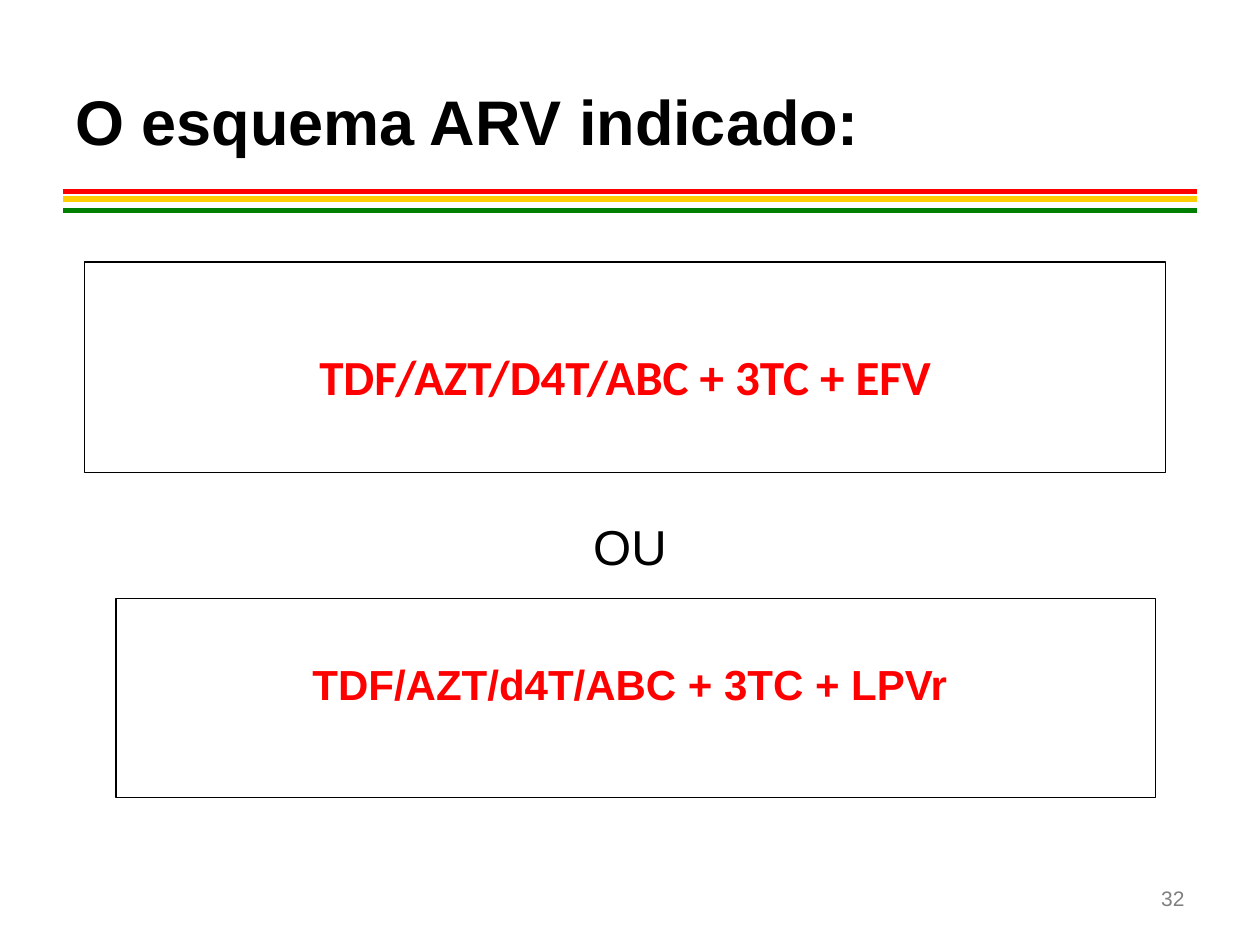
from pptx import Presentation
from pptx import util as u
from pptx.dml.color import RGBColor
from pptx.enum import shapes, text
from pptx.oxml.ns import qn
from lxml import etree

BLACK = RGBColor(0x00, 0x00, 0x00)
WHITE = RGBColor(0xFF, 0xFF, 0xFF)
RED = RGBColor(0xFF, 0x00, 0x00)
YELLOW = RGBColor(0xFF, 0xCC, 0x00)
GREEN = RGBColor(0x00, 0x80, 0x00)
GRAY = RGBColor(0x80, 0x80, 0x80)


class SlideBuilder:
    font_name = "Arial"
    stripe_width = u.Pt(3)
    border_width = u.Pt(0.75)

    def __init__(self, slide):
        self.slide = slide

    def stripe(self, top, color):
        connector = self.slide.shapes.add_connector(
            shapes.MSO_CONNECTOR.STRAIGHT,
            u.Inches(0.5), u.Inches(top), u.Inches(9.5), u.Inches(top))
        connector.line.color.rgb = color
        connector.line.width = self.stripe_width
        properties = connector._element.find(qn("p:spPr"))
        etree.SubElement(properties, qn("a:effectLst"))

    def set_text(self, shape, content, size, color, bold=False, font_name=None,
                 alignment=text.PP_ALIGN.CENTER, anchor=text.MSO_ANCHOR.TOP,
                 top_inset=0.05):
        frame = shape.text_frame
        frame.word_wrap = True
        frame.vertical_anchor = anchor
        frame.margin_top = u.Inches(top_inset)
        frame.text = content
        paragraph = frame.paragraphs[0]
        paragraph.alignment = alignment
        font = paragraph.runs[0].font
        font.name = font_name or self.font_name
        font.size = u.Pt(size)
        font.bold = bold
        font.color.rgb = color

    def label(self, bounds, content, size, color, **style):
        shape = self.slide.shapes.add_textbox(*map(u.Inches, bounds))
        self.set_text(shape, content, size, color, **style)

    def regimen_box(self, bounds, content, size, **style):
        shape = self.slide.shapes.add_shape(
            shapes.MSO_SHAPE.RECTANGLE, *map(u.Inches, bounds))
        shape.shadow.inherit = False
        shape.fill.solid()
        shape.fill.fore_color.rgb = WHITE
        shape.line.color.rgb = BLACK
        shape.line.width = self.border_width
        self.set_text(shape, content, size, RED, bold=True, **style)


def main():
    presentation = Presentation()
    presentation.slide_width = u.Inches(10)
    presentation.slide_height = u.Inches(7.5)
    slide = presentation.slides.add_slide(presentation.slide_layouts[6])
    builder = SlideBuilder(slide)

    for top, color in ((1.58, YELLOW), (1.52, RED), (1.67, GREEN)):
        builder.stripe(top, color)

    builder.label((0.5, 0.33, 8.58, 1.25), "O esquema ARV indicado:", 36, BLACK,
                  bold=True, alignment=text.PP_ALIGN.LEFT,
                  anchor=text.MSO_ANCHOR.MIDDLE)
    builder.label((0.5, 1.83, 9, 4.92), "OU", 28, BLACK, top_inset=2.27)
    builder.regimen_box((0.67, 2.08, 8.58, 1.67), "TDF/AZT/D4T/ABC + 3TC + EFV",
                        28, font_name="Calibri", top_inset=0.67)
    builder.regimen_box((0.92, 4.75, 8.25, 1.58), "TDF/AZT/d4T/ABC + 3TC + LPVr ",
                        24, top_inset=0.48)
    builder.label((8.33, 6.98, 1.17, 0.52), "32", 12, GRAY,
                  alignment=text.PP_ALIGN.RIGHT)

    presentation.save("out.pptx")


if __name__ == "__main__":
    main()
